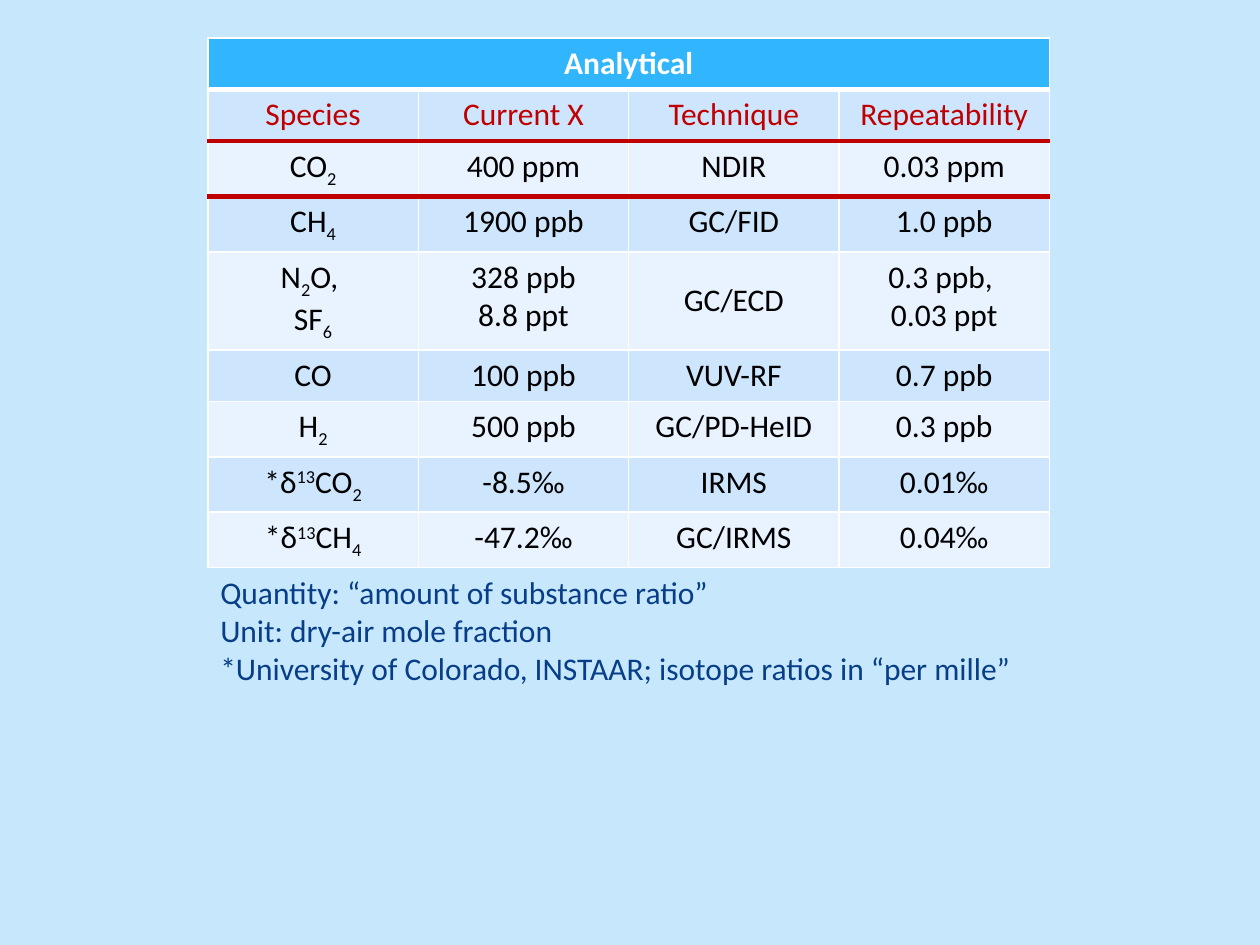
from lxml import etree
from pptx import Presentation
from pptx.dml.color import RGBColor
from pptx.enum.text import MSO_ANCHOR, MSO_AUTO_SIZE, PP_ALIGN
from pptx.oxml.ns import qn
from pptx.util import Inches, Pt

CENTER, LEFT = PP_ALIGN.CENTER, PP_ALIGN.LEFT
TOP, MIDDLE = MSO_ANCHOR.TOP, MSO_ANCHOR.MIDDLE
GROW = MSO_AUTO_SIZE.SHAPE_TO_FIT_TEXT
BASELINES = {"_": "-25000", "^": "30000"}
WHITE, RED = "FFFFFF", "C00000"
THIN_WHITE, THICK_WHITE, THICK_RED = (WHITE, 1), (WHITE, 3), (RED, 3)

TITLE = "Analytical"
HEADINGS = ["Species", "Current Χ", "Technique", "Repeatability"]
MEASUREMENTS = [
    ["CO|_2", "400 ppm", "NDIR", "0.03 ppm"],
    ["CH|_4", "1900 ppb", "GC/FID", "1.0 ppb"],
    ["N|_2|O, \nSF|_6", "328 ppb\n8.8 ppt", "GC/ECD", "0.3 ppb, \n0.03 ppt"],
    ["CO", "100 ppb", "VUV-RF", "0.7 ppb"],
    ["H|_2", "500 ppb", "GC/PD-HeID", "0.3 ppb"],
    ["*δ|^13|CO|_2", "-8.5‰", "IRMS", "0.01‰"],
    ["*δ|^13|CH|_4", "-47.2‰", "GC/IRMS", "0.04‰"],
]
NOTES = (
    "Quantity: “amount of substance ratio”\n"
    "Unit: dry-air mole fraction\n"
    "*University of Colorado, INSTAAR; isotope ratios in “per mille”"
)


def rgb(value):
    """Turn a hex string into a colour."""
    return RGBColor.from_string(value)


def write_text(frame, text, *, font="Calibri", size=18, color="000000", bold=False, align=LEFT):
    """Write lines whose |-separated pieces start with _ or ^ when lowered or raised."""
    for index, line in enumerate(text.split("\n")):
        paragraph = frame.add_paragraph() if index else frame.paragraphs[0]
        paragraph.alignment = align
        for piece in line.split("|"):
            run = paragraph.add_run()
            run.text = piece.lstrip("_^")
            run.font.name, run.font.size, run.font.bold = font, Pt(size), bold
            run.font.color.rgb = rgb(color)
            if piece[0] in BASELINES:
                run.font._element.set("baseline", BASELINES[piece[0]])


def set_borders(cell, top, bottom):
    """Draw thin white sides and the given top and bottom borders."""
    properties = cell._tc.get_or_add_tcPr()
    borders = {"lnL": THIN_WHITE, "lnR": THIN_WHITE, "lnT": top, "lnB": bottom}
    for index, (tag, (color, width)) in enumerate(borders.items()):
        line = etree.Element(qn(f"a:{tag}"), w=str(Pt(width)))
        fill = etree.SubElement(line, qn("a:solidFill"))
        etree.SubElement(fill, qn("a:srgbClr"), val=color)
        properties.insert(index, line)


class AnalyticalSlide:
    """Holds the style and the current slide."""

    header_fill, bands = "31B6FD", ("E8F3FF", "CEE5FE")
    background, note_color = "C6E7FC", "073E87"

    def __init__(self, deck):
        """Add a blank slide with its background."""
        self.slide = deck.slides.add_slide(deck.slide_layouts[6])
        fill = self.slide.background.fill
        fill.solid()
        fill.fore_color.rgb = rgb(self.background)

    def add_measurements(self, left, top, column_width, row_height):
        """Add the banded table with its title and heading rows."""
        rows = [[TITLE, "", "", ""], HEADINGS, *MEASUREMENTS]
        rules = [THIN_WHITE, THICK_WHITE, THICK_RED, THICK_RED]
        rules += [THIN_WHITE] * (len(rows) + 1 - len(rules))
        table = self.slide.shapes.add_table(
            len(rows), len(HEADINGS), Inches(left), Inches(top),
            Inches(column_width * len(HEADINGS)), Inches(row_height * len(rows)),
        ).table
        for column in table.columns:
            column.width = Inches(column_width)
        for row_index, texts in enumerate(rows):
            table.rows[row_index].height = Inches(row_height)
            fill = self.bands[row_index % 2] if row_index else self.header_fill
            color = (WHITE, RED)[row_index] if row_index < 2 else "000000"
            for column_index, text in enumerate(texts):
                cell = table.cell(row_index, column_index)
                cell.fill.solid()
                cell.fill.fore_color.rgb = rgb(fill)
                cell.vertical_anchor = MIDDLE if text == "GC/ECD" else TOP
                set_borders(cell, rules[row_index], rules[row_index + 1])
                if text:
                    write_text(cell.text_frame, text, color=color, bold=row_index == 0, align=CENTER)
        table.cell(0, 0).merge(table.cell(0, len(HEADINGS) - 1))

    def add_notes_text(self, text, left, top, width, height):
        """Add the explanatory lines below the table."""
        frame = self.slide.shapes.add_textbox(
            Inches(left), Inches(top), Inches(width), Inches(height)
        ).text_frame
        frame.word_wrap = True
        frame.auto_size = GROW
        write_text(frame, text, color=self.note_color)


def main():
    """Build and save the slide."""
    deck = Presentation()
    deck.slide_width, deck.slide_height = Inches(10), Inches(7.5)
    page = AnalyticalSlide(deck)
    page.add_measurements(1.65, 0.3, 1.67, 0.41)
    page.add_notes_text(NOTES, 1.65, 4.5, 6.74, 1.01)
    deck.save("out.pptx")


if __name__ == "__main__":
    main()
